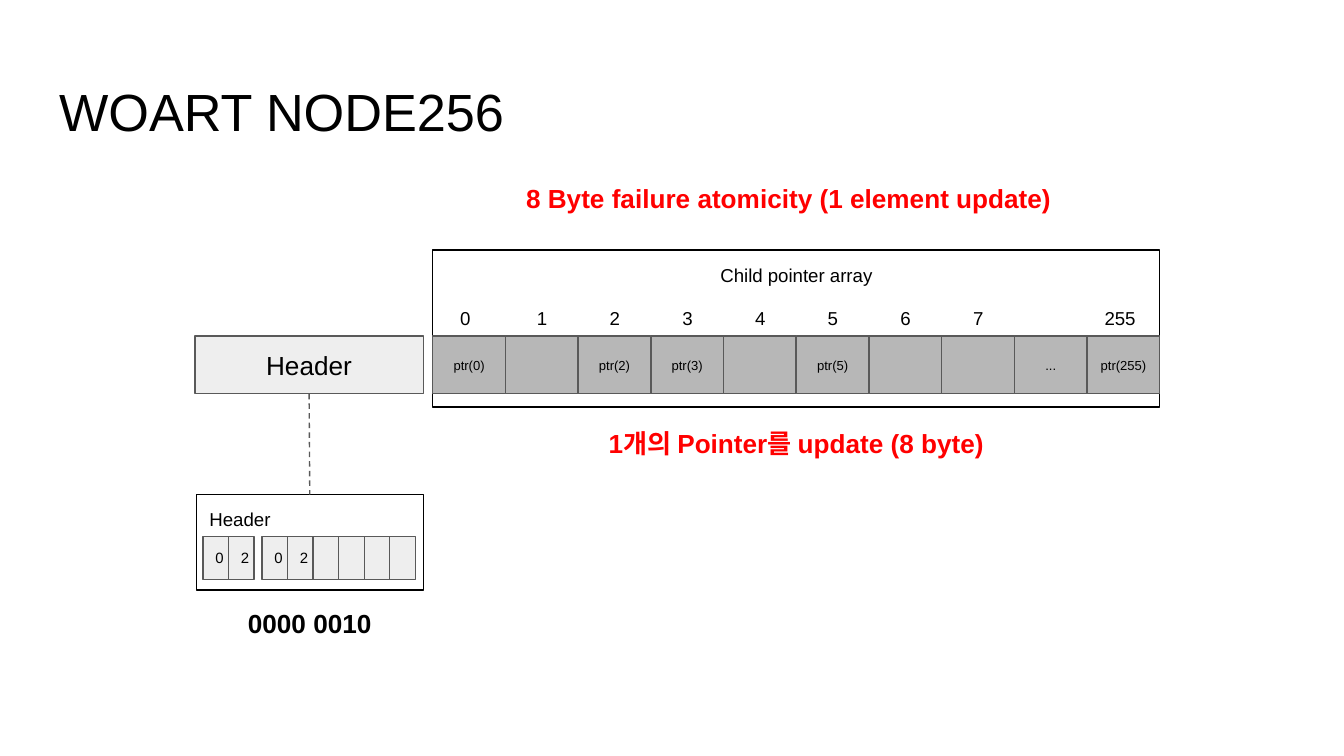
from lxml import etree
from pptx import Presentation
from pptx.dml.color import RGBColor
from pptx.enum.dml import MSO_LINE
from pptx.enum.shapes import MSO_CONNECTOR, MSO_SHAPE
from pptx.enum.text import MSO_ANCHOR, PP_ALIGN
from pptx.oxml.ns import qn
from pptx.util import Inches, Pt

RECT = MSO_SHAPE.RECTANGLE
STRAIGHT = MSO_CONNECTOR.STRAIGHT
DASH = MSO_LINE.DASH
LEFT, CENTER = PP_ALIGN.LEFT, PP_ALIGN.CENTER
TOP, MIDDLE = MSO_ANCHOR.TOP, MSO_ANCHOR.MIDDLE

COLORS = {"ink": "000000", "edge": "595959", "light": "EEEEEE",
          "gray": "B7B7B7", "red": "FF0000"}
FONT = "Arial"

# Slide in 16:9
WIDTH = 10
HEIGHT = WIDTH * 9 / 16

# Pointer array grid: ten equal columns
ARRAY_X, ARRAY_W = 3.22, 5.41
COLS = 10
COL_W = ARRAY_W / COLS
ROW_Y, ROW_H = 2.5, 0.43
PTRS = ["ptr(0)", "", "ptr(2)", "ptr(3)", "", "ptr(5)", "", "", "...", "ptr(255)"]
MARKS = ["0", "1", "2", "3", "4", "5", "6", "7", "", "255"]

# Header detail grid: (left edge, cell texts)
BYTE_W = 0.19
BYTES = [(1.51, ["0", "2"]), (1.95, ["0", "2", "", "", "", ""])]


def color(name):
    return RGBColor.from_string(COLORS[name])


def place(shape, box):
    shape.left, shape.top, shape.width, shape.height = map(Inches, box)


def write(shape, text, size, align=LEFT, anchor=TOP, ink="ink", bold=False, wrap=True):
    frame = shape.text_frame
    frame.text = text
    frame.word_wrap = wrap
    frame.vertical_anchor = anchor
    frame.margin_left = frame.margin_right = Inches(0.1)
    frame.margin_top = frame.margin_bottom = Inches(0.1)
    for para in frame.paragraphs:
        para.alignment = align
        for run in para.runs:
            run.font.name = FONT
            run.font.size = Pt(size)
            run.font.bold = bold
            run.font.color.rgb = color(ink)


def add_box(shapes, box, fill=None, edge="edge"):
    shape = shapes.add_shape(RECT, *map(Inches, box))
    shape.shadow.inherit = False
    if fill:
        shape.fill.solid()
        shape.fill.fore_color.rgb = color(fill)
    else:
        shape.fill.background()
    shape.line.color.rgb = color(edge)
    shape.line.width = Pt(0.75)
    return shape


def add_cell(shapes, box, fill, text, size, wrap=True):
    cell = add_box(shapes, box, fill)
    if text:
        write(cell, text, size, CENTER, MIDDLE, wrap=wrap)
    return cell


def add_label(shapes, box, text, size, **style):
    write(shapes.add_textbox(*map(Inches, box)), text, size, **style)


def add_link(shapes, start, end):
    link = shapes.add_connector(STRAIGHT, 0, 0, 0, 0)
    link.begin_connect(start, 2)
    link.end_connect(end, 0)
    link.line.color.rgb = color("edge")
    link.line.width = Pt(0.75)
    link.line.dash_style = DASH
    etree.SubElement(link._element.spPr, qn("a:effectLst"))


def add_detail(shapes):
    group = shapes.add_group_shape().shapes
    panel = add_box(group, (1.46, 3.68, 1.69, 0.71), edge="ink")
    write(panel, "Header", 10)
    for left, texts in BYTES:
        for i, text in enumerate(texts):
            box = (left + i * BYTE_W, 3.99, BYTE_W, 0.32)
            add_cell(group, box, "light", text, 8)
    return panel


def add_array(shapes):
    frame = add_box(shapes, (ARRAY_X, 1.86, ARRAY_W, 1.17), edge="ink")
    write(frame, "Child pointer array", 10, CENTER)
    for i, (ptr, mark) in enumerate(zip(PTRS, MARKS)):
        left = ARRAY_X + i * COL_W
        add_cell(shapes, (left, ROW_Y, COL_W, ROW_H), "gray", ptr, 7, wrap=False)
        if mark:
            # Index label centred over its column; the first sits slightly left
            width = 0.48 if len(mark) > 1 else 0.27
            shift = 0 if i else -0.03
            x = left + (COL_W - width) / 2 + shift
            add_label(shapes, (x, 2.2, width, 0.32), mark, 10)


def main():
    deck = Presentation()
    deck.slide_width, deck.slide_height = Inches(WIDTH), Inches(HEIGHT)
    slide = deck.slides.add_slide(deck.slide_layouts[5])
    shapes = slide.shapes

    # Title
    place(shapes.title, (0.34, 0.49, 9.32, 0.63))
    write(shapes.title, "WOART NODE256", 28)

    # Node: header, its detail and the pointer array
    panel = add_detail(shapes)
    add_array(shapes)
    header = add_cell(shapes, (1.45, ROW_Y, 1.7, ROW_H), "light", "Header", 14)
    add_link(shapes, header, panel)

    # Notes around the node
    add_label(shapes, (1.48, 4.42, 1.65, 0.36), "0000 0010", 14,
              align=CENTER, bold=True)
    add_label(shapes, (3.55, 1.26, 4.64, 0.46),
              "8 Byte failure atomicity (1 element update)", 14,
              align=CENTER, ink="red", bold=True)
    add_label(shapes, (4.35, 3.08, 3.15, 0.46),
              "1개의 Pointer를 update (8 byte)", 14,
              align=CENTER, ink="red", bold=True)

    deck.save("out.pptx")


if __name__ == "__main__":
    main()
